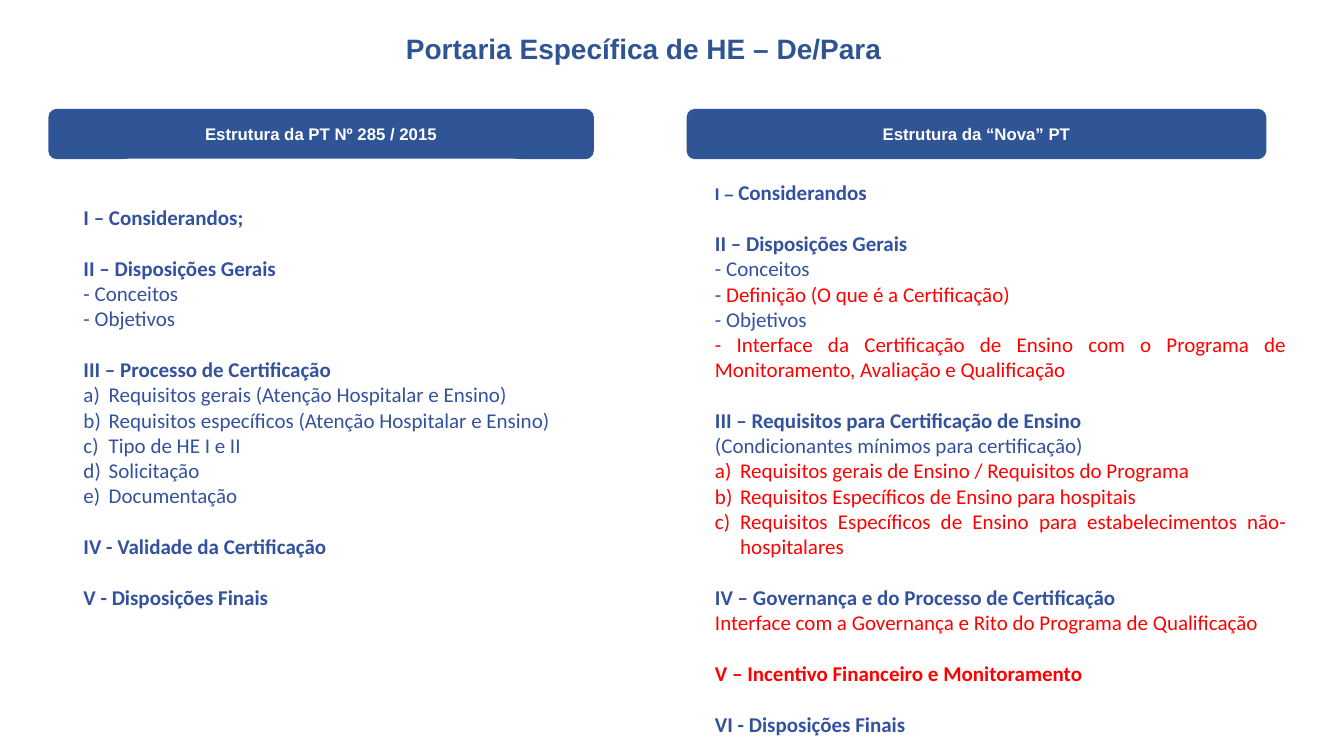
import pptx
import pptx.util
import pptx.dml.color
import pptx.enum.shapes
import pptx.enum.text
import pptx.oxml.ns
from lxml import etree

Inches, Pt = pptx.util.Inches, pptx.util.Pt
RGBColor = pptx.dml.color.RGBColor
ALIGN = pptx.enum.text.PP_ALIGN
MIDDLE = pptx.enum.text.MSO_ANCHOR.MIDDLE

TITLE_BLUE = RGBColor(0x2F, 0x54, 0x96)
BAR_BLUE = RGBColor(0x2F, 0x55, 0x97)
TEXT_BLUE = RGBColor(0x33, 0x52, 0x9E)
RED = RGBColor(0xFF, 0x00, 0x00)
WHITE = RGBColor(0xFF, 0xFF, 0xFF)

BODY = {"name": "Calibri", "size": Pt(15), "bold": False}
PLAIN = {**BODY, "color": TEXT_BLUE}
NEW = {**BODY, "color": RED}
HEAD = {**PLAIN, "bold": True}
NEW_HEAD = {**NEW, "bold": True}
NUMERAL = {**HEAD, "name": "Arial", "size": Pt(12)}
TITLE = {"name": "Arial", "size": Pt(20), "bold": True, "color": TITLE_BLUE}
BAR = {"name": "Arial", "size": Pt(12), "bold": True, "color": WHITE}


def line(text, fmt):
    return [(text, fmt)], False


def lettered(text, fmt):
    return [(text, fmt)], True


# Each column is a list of sections; each section is a list of lines.
CURRENT = [
    [line("I – Considerandos;", HEAD)],
    [line("II – Disposições Gerais", HEAD),
     line("- Conceitos", PLAIN),
     line("- Objetivos", PLAIN)],
    [line("III – Processo de Certificação", HEAD),
     lettered("Requisitos gerais (Atenção Hospitalar e Ensino)", PLAIN),
     lettered("Requisitos específicos (Atenção Hospitalar e Ensino)", PLAIN),
     lettered("Tipo de HE I e II", PLAIN),
     lettered("Solicitação", PLAIN),
     lettered("Documentação", PLAIN)],
    [line("IV - Validade da Certificação", HEAD)],
    [line("V - Disposições Finais", HEAD)],
]
PROPOSED = [
    [([("I – ", NUMERAL), ("Considerandos", HEAD)], False)],
    [line("II – Disposições Gerais", HEAD),
     line("- Conceitos", PLAIN),
     ([("- ", PLAIN), ("Definição (O que é a Certificação)", NEW)], False),
     line("- Objetivos", PLAIN),
     line("- Interface da Certificação de Ensino com o Programa de "
          "Monitoramento, Avaliação e Qualificação", NEW)],
    [line("III – Requisitos para Certificação de Ensino", HEAD),
     line("(Condicionantes mínimos para certificação)", PLAIN),
     lettered("Requisitos gerais de Ensino / Requisitos do Programa", NEW),
     lettered("Requisitos Específicos de Ensino para hospitais", NEW),
     lettered("Requisitos Específicos de Ensino para estabelecimentos "
              "não-hospitalares", NEW)],
    [line("IV – Governança e do Processo de Certificação", HEAD),
     line("Interface com a Governança e Rito do Programa de Qualificação", NEW)],
    [line("V – Incentivo Financeiro e Monitoramento", NEW_HEAD)],
    [line("VI - Disposições Finais", HEAD)],
]


class Slide:
    """Holds the current slide and the style shared by its elements."""

    section_gap = Pt(18.3)
    indent = Inches(0.25)

    def __init__(self, prs):
        self.s = prs.slides.add_slide(prs.slide_layouts[5])

    def add_runs(self, p, runs, align):
        p.alignment = align
        for text, fmt in runs:
            r = p.add_run()
            r.text = text
            for key, value in fmt.items():
                if key == "color":
                    r.font.color.rgb = value
                else:
                    setattr(r.font, key, value)

    def title(self, text, left, top, width, height):
        sp = self.s.shapes.title
        sp.left, sp.top, sp.width, sp.height = map(Inches, (left, top, width, height))
        tf = sp.text_frame
        tf.auto_size = pptx.enum.text.MSO_AUTO_SIZE.NONE
        tf.vertical_anchor = MIDDLE
        self.add_runs(tf.paragraphs[0], [(text, TITLE)], ALIGN.CENTER)

    def rounded(self, box, fill):
        sp = self.s.shapes.add_shape(
            pptx.enum.shapes.MSO_SHAPE.ROUNDED_RECTANGLE, *map(Inches, box))
        sp.shadow.inherit = False
        sp.fill.solid()
        sp.fill.fore_color.rgb = fill
        sp.text_frame.word_wrap = True
        sp.text_frame.vertical_anchor = MIDDLE
        return sp

    def bar(self, text, *box):
        sp = self.rounded(box, BAR_BLUE)
        sp.line.fill.background()
        self.add_runs(sp.text_frame.paragraphs[0], [(text, BAR)], ALIGN.CENTER)

    def panel(self, sections, *box, bottom=0.05):
        sp = self.rounded(box, WHITE)
        sp.line.color.rgb = WHITE
        sp.line.width = Pt(1)
        tf = sp.text_frame
        tf.margin_bottom = Inches(bottom)
        p = tf.paragraphs[0]
        for i, section in enumerate(sections):
            for j, (runs, has_letter) in enumerate(section):
                if i or j:
                    p = tf.add_paragraph()
                if i and not j:
                    p.space_before = self.section_gap
                if has_letter:
                    self.letter(p)
                self.add_runs(p, runs, ALIGN.JUSTIFY)

    def letter(self, p):
        """Number the paragraph a), b), c) with a hanging indent."""
        pPr = p._p.get_or_add_pPr()
        pPr.set("marL", str(self.indent))
        pPr.set("indent", str(-self.indent))
        etree.SubElement(pPr, pptx.oxml.ns.qn("a:buAutoNum"), type="alphaLcParenR")


def main():
    prs = pptx.Presentation()
    prs.slide_width, prs.slide_height = Inches(13.33), Inches(7.5)
    slide = Slide(prs)
    slide.title("Portaria Específica de HE – De/Para", 3.85, 0.26, 5.07, 0.44)
    slide.bar("Estrutura da PT Nº 285 / 2015", 0.48, 1.08, 5.41, 0.5)
    slide.bar("Estrutura da “Nova” PT", 6.81, 1.08, 5.75, 0.5)
    slide.panel(PROPOSED, 6.71, 1.64, 6.43, 5.81)
    slide.panel(CURRENT, 0.48, 1.58, 5.41, 5.12, bottom=0.25)
    prs.save("out.pptx")


if __name__ == "__main__":
    main()
